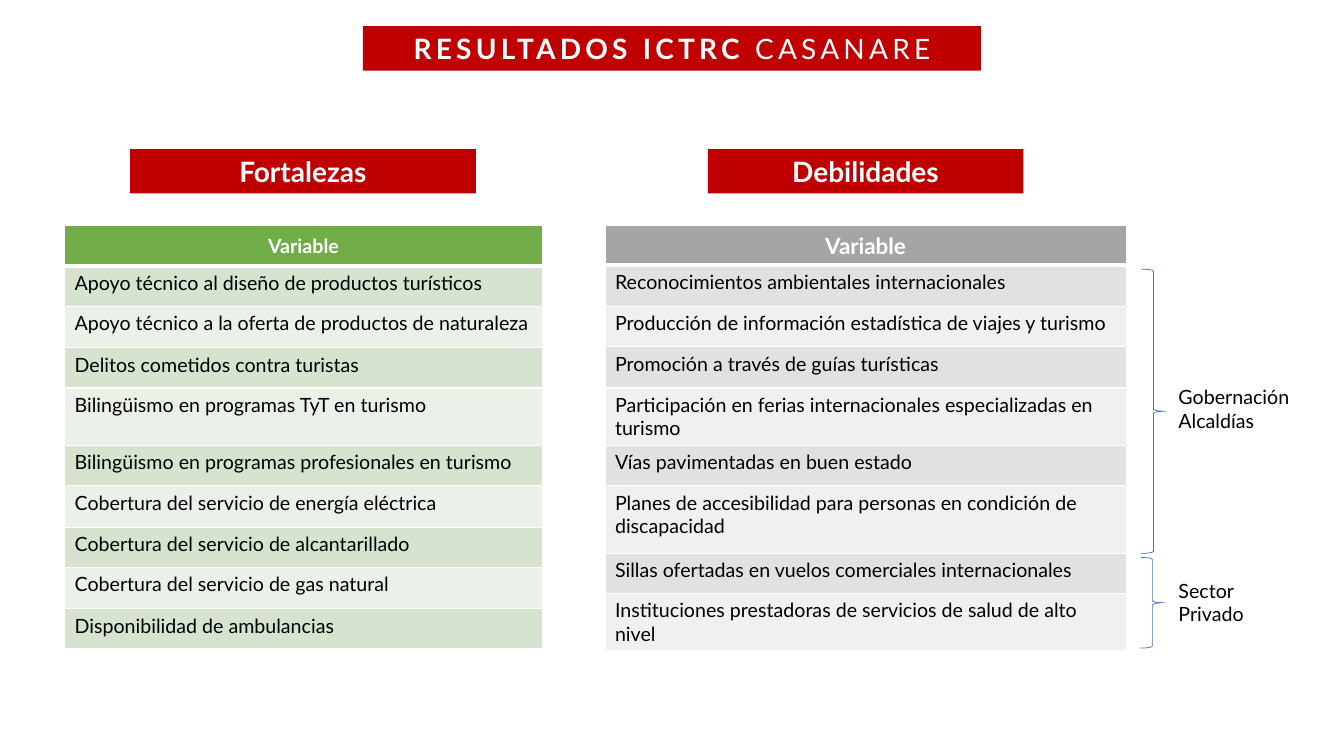
from dataclasses import dataclass

from lxml.etree import SubElement
from pptx import Presentation
from pptx.dml.color import RGBColor
from pptx.enum.shapes import MSO_SHAPE as Shape
from pptx.enum.text import MSO_ANCHOR as Anchor, MSO_AUTO_SIZE as AutoSize, PP_ALIGN as Align
from pptx.oxml.ns import qn
from pptx.util import Emu, Pt

PX = 9144  # 100 px to the inch


@dataclass(frozen=True)
class Theme:
    font: str = "Lato"
    white: str = "FFFFFF"
    black: str = "000000"
    red: str = "C00000"
    blue: str = "4472C4"
    green: tuple = ("70AD47", "D5E3CF", "EBF1E9")
    gray: tuple = ("A5A5A5", "E1E1E1", "F0F0F0")
    heading: int = 20
    subheading: int = 16
    body: int = 14


THEME = Theme()


@dataclass(frozen=True)
class Box:
    left: int
    top: int
    width: int
    height: int

    def emu(self) -> list[Emu]:
        return [Emu(side * PX) for side in (self.left, self.top, self.width, self.height)]


@dataclass(frozen=True)
class VariableTable:
    title: str
    banner: Box
    left: int
    width: int
    colors: tuple  # header, odd rows, even rows
    header_size: int
    heights: list[int]
    variables: list[str]


@dataclass(frozen=True)
class Group:
    brace: Box
    label: Box
    names: list[str]


TABLES = [
    VariableTable(
        "Fortalezas", Box(129, 148, 343, 44), 64, 474, THEME.green, THEME.body,
        [40, 40, 41, 40, 57, 40, 41, 40, 41, 40],
        ["Apoyo técnico al diseño de productos turísticos",
         "Apoyo técnico a la oferta de productos de naturaleza",
         "Delitos cometidos contra turistas",
         "Bilingüismo en programas TyT en turismo",
         "Bilingüismo en programas profesionales en turismo",
         "Cobertura del servicio de energía eléctrica",
         "Cobertura del servicio de alcantarillado",
         "Cobertura del servicio de gas natural",
         "Disponibilidad de ambulancias"]),
    VariableTable(
        "Debilidades", Box(702, 148, 313, 44), 600, 517, THEME.gray, THEME.subheading,
        [39, 41, 40, 41, 57, 40, 67, 40, 57],
        ["Reconocimientos ambientales internacionales",
         "Producción de información estadística de viajes y turismo",
         "Promoción a través de guías turísticas",
         "Participación en ferias internacionales especializadas en turismo",
         "Vías pavimentadas en buen estado",
         "Planes de accesibilidad para personas en condición de discapacidad",
         "Sillas ofertadas en vuelos comerciales internacionales",
         "Instituciones prestadoras de servicios de salud de alto nivel"]),
]
GROUPS = [
    Group(Box(1132, 267, 24, 282), Box(1159, 377, 136, 57), ["Gobernación", "Alcaldías"]),
    Group(Box(1131, 553, 24, 90), Box(1159, 569, 100, 57), ["Sector", "Privado"]),
]
TABLE_TOP = 224


def write(para, text: str, *, size: int = THEME.body, color: str = THEME.black,
          bold: bool = False, align: Align = Align.LEFT, spacing: int = 0) -> None:
    para.alignment = align
    span = para.add_run()
    span.text = text
    span.font.name = THEME.font
    span.font.size = Pt(size)
    span.font.bold = bold
    span.font.color.rgb = RGBColor.from_string(color)
    if spacing:
        span.font._element.set("spc", str(spacing * 100))


def paint(fill, color: str) -> None:
    fill.solid()
    fill.fore_color.rgb = RGBColor.from_string(color)


def set_borders(cell, bottom: int) -> None:
    properties = cell._tc.get_or_add_tcPr()
    for index, (side, points) in enumerate(
            {"lnL": 1, "lnR": 1, "lnT": 1, "lnB": bottom}.items()):
        line = SubElement(properties, qn(f"a:{side}"), w=str(Pt(points)))
        SubElement(SubElement(line, qn("a:solidFill")), qn("a:srgbClr"), val=THEME.white)
        properties.insert(index, line)


def draw_title(page) -> None:
    title = page.shapes.title
    title.left, title.top, title.width, title.height = Box(360, 26, 613, 44).emu()
    paint(title.fill, THEME.red)
    frame = title.text_frame
    frame.auto_size = AutoSize.NONE
    frame.word_wrap = False
    frame.vertical_anchor = Anchor.MIDDLE
    for text, bold in (("RESULTADOS ICTRC ", True), ("CASANARE", False)):
        write(frame.paragraphs[0], text, size=THEME.heading, color=THEME.white,
              bold=bold, align=Align.CENTER, spacing=3)


def draw_banner(page, text: str, place: Box) -> None:
    banner = page.shapes.add_shape(Shape.RECTANGLE, *place.emu())
    banner.shadow.inherit = False
    paint(banner.fill, THEME.red)
    banner.line.fill.background()
    write(banner.text_frame.paragraphs[0], text, size=THEME.heading,
          color=THEME.white, bold=True, align=Align.CENTER)


def draw_table(page, spec_: VariableTable) -> None:
    place = Box(spec_.left, TABLE_TOP, spec_.width, sum(spec_.heights))
    table = page.shapes.add_table(len(spec_.heights), 1, *place.emu()).table
    header, *bands = spec_.colors
    for index, (text, height) in enumerate(zip(["Variable", *spec_.variables], spec_.heights)):
        table.rows[index].height = Emu(height * PX)
        cell = table.cell(index, 0)
        para = cell.text_frame.paragraphs[0]
        if index == 0:
            paint(cell.fill, header)
            cell.vertical_anchor = Anchor.MIDDLE
            write(para, text, size=spec_.header_size, color=THEME.white,
                  bold=True, align=Align.CENTER)
        else:
            paint(cell.fill, bands[(index - 1) % 2])
            write(para, text)
        set_borders(cell, bottom=1 if index else 3)


def draw_group(page, group: Group) -> None:
    brace = page.shapes.add_shape(Shape.RIGHT_BRACE, *group.brace.emu())
    brace.shadow.inherit = False
    brace.fill.background()
    brace.line.color.rgb = RGBColor.from_string(THEME.blue)
    brace.line.width = Pt(0.5)
    frame = page.shapes.add_textbox(*group.label.emu()).text_frame
    frame.word_wrap = True
    for index, name in enumerate(group.names):
        write(frame.add_paragraph() if index else frame.paragraphs[0], name)


def main() -> None:
    deck = Presentation()
    deck.slide_width, deck.slide_height = Emu(1333 * PX), Emu(750 * PX)
    page = deck.slides.add_slide(deck.slide_layouts.get_by_name("Title Only"))

    # Title and the two variable tables with their banners
    draw_title(page)
    for table in TABLES:
        draw_banner(page, table.title, table.banner)
        draw_table(page, table)

    # Who is responsible for the weaknesses
    for group in GROUPS:
        draw_group(page, group)

    deck.save("out.pptx")


if __name__ == "__main__":
    main()
